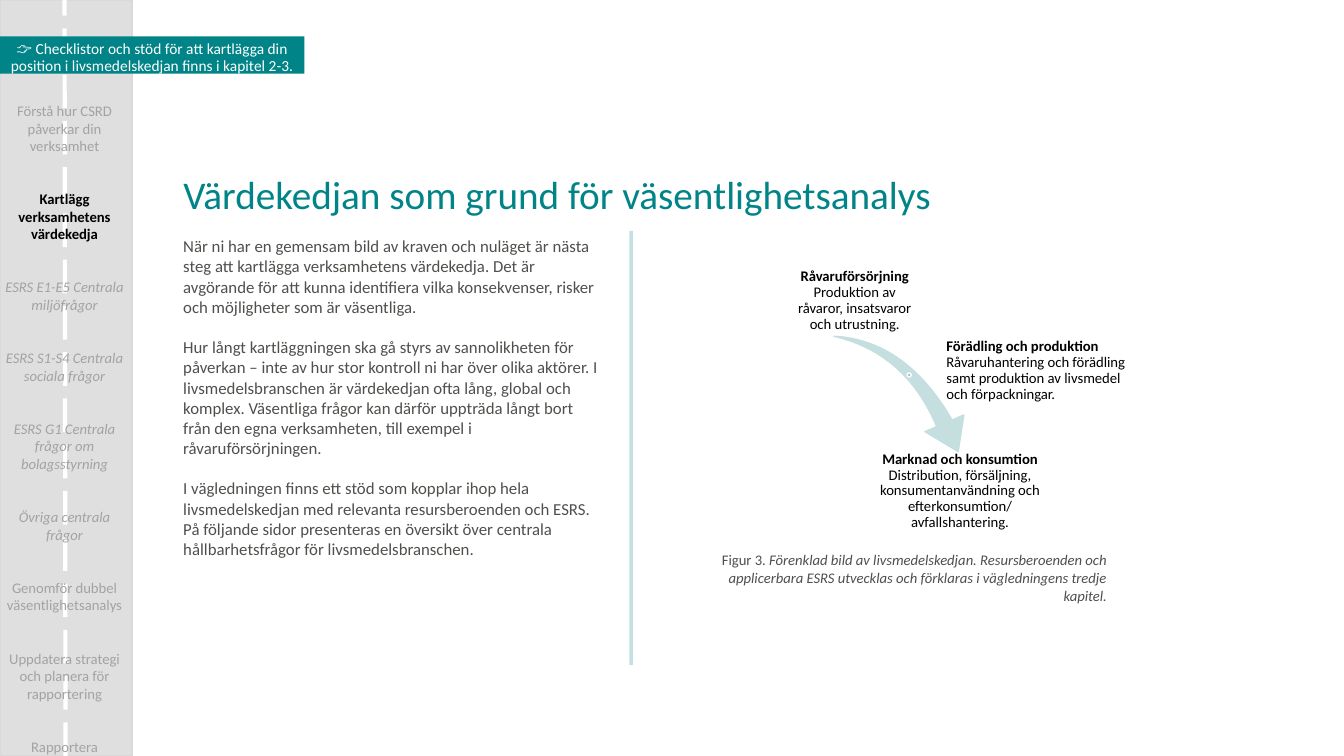
"""Build the slide on the value chain as a basis for materiality analysis."""
from dataclasses import dataclass

from lxml.etree import SubElement
from pptx import Presentation
from pptx.dml.color import RGBColor
from pptx.enum.dml import MSO_LINE
from pptx.enum.shapes import MSO_CONNECTOR, MSO_SHAPE
from pptx.enum.text import MSO_ANCHOR as ANCHOR, MSO_AUTO_SIZE, PP_ALIGN as ALIGN
from pptx.oxml.ns import qn
from pptx.util import Pt


@dataclass(frozen=True)
class Theme:
    font: str = "Calibri"
    teal: str = "008487"
    pale_teal: str = "C5DEE0"
    dot: str = "ABC2C3"
    sidebar: str = "DFDFDF"
    sidebar_edge: str = "D9D9D9"
    white: str = "FFFFFF"
    black: str = "000000"
    body: str = "4F4F4C"
    muted: str = "A3A3A3"
    title_size: float = 28
    body_size: float = 12
    banner_size: float = 11
    label_size: float = 10.5


THEME = Theme()


def write(shape, paragraphs, size, color, anchor=ANCHOR.TOP, insets=(7.2, 3.6), **formats):
    """Fill a shape with paragraphs, each a list of (text, run font formats)."""
    frame = shape.text_frame
    frame.word_wrap = True
    frame.auto_size = MSO_AUTO_SIZE.NONE
    frame.vertical_anchor = anchor
    frame.margin_left = frame.margin_right = Pt(insets[0])
    frame.margin_top = frame.margin_bottom = Pt(insets[1])
    gap = formats.pop("gap", 0)
    for index, runs in enumerate(paragraphs):
        paragraph = frame.add_paragraph() if index else frame.paragraphs[0]
        paragraph.space_before = Pt(gap if index else 0)
        for name, value in formats.items():
            setattr(paragraph, name, value)
        for position, (text, run_formats) in enumerate(runs):
            if position and formats.get("line_spacing"):
                paragraph.add_line_break()
            run = paragraph.add_run()
            run.text = text
            values = {"name": THEME.font, "size": Pt(size), "bold": False, "italic": False}
            for name, value in (values | run_formats).items():
                if name != "color":
                    setattr(run.font, name, value)
            run.font.color.rgb = RGBColor.from_string(run_formats.get("color", color))


def add_figure(kind, box, fill, line):
    """Add a filled preset shape without shadow."""
    shape = slide.shapes.add_shape(kind, *map(Pt, box))
    shape.shadow.inherit = False
    shape.fill.solid()
    shape.fill.fore_color.rgb = RGBColor.from_string(fill)
    shape.line.color.rgb = RGBColor.from_string(line)
    shape.line.width = Pt(1)
    return shape


presentation = Presentation()
presentation.slide_width, presentation.slide_height = Pt(960), Pt(540)
slide = presentation.slides.add_slide(presentation.slide_layouts[5])

add_figure(MSO_SHAPE.RECTANGLE, (0, 0, 94.3, 540), THEME.sidebar, THEME.sidebar_edge)

lines = {}
for name, ends, color, width in (
    ("road", (46.8, 540, 46.1, 0), THEME.white, 3),
    ("divider", (450.9, 165, 450.9, 475), THEME.teal, 2.5),
):
    connector = slide.shapes.add_connector(MSO_CONNECTOR.STRAIGHT, *map(Pt, ends))
    connector.line.color.rgb = RGBColor.from_string(color)
    connector.line.width = Pt(width)
    SubElement(connector._element.spPr, qn("a:effectLst"))
    lines[name] = connector
lines["road"].line.dash_style = MSO_LINE.LONG_DASH
divider_color = lines["divider"]._element.spPr.find(".//" + qn("a:srgbClr"))
SubElement(divider_color, qn("a:alpha")).set("val", "23000")

title = slide.shapes.title
title.left, title.top, title.width, title.height = map(Pt, (123.8, 112.3, 570, 57))
write(title, [[("Värdekedjan som grund för väsentlighetsanalys", {})]], THEME.title_size,
      THEME.teal, ANCHOR.MIDDLE, (7.2, 0), alignment=ALIGN.LEFT, line_spacing=0.9)

body_texts = (
    "När ni har en gemensam bild av kraven och nuläget är nästa steg att kartlägga "
    "verksamhetens värdekedja. Det är avgörande för att kunna identifiera vilka "
    "konsekvenser, risker och möjligheter som är väsentliga.",
    "Hur långt kartläggningen ska gå styrs av sannolikheten för påverkan – inte av hur "
    "stor kontroll ni har över olika aktörer. I livsmedelsbranschen är värdekedjan ofta "
    "lång, global och komplex. Väsentliga frågor kan därför uppträda långt bort från den "
    "egna verksamheten, till exempel i råvaruförsörjningen.",
    "I vägledningen finns ett stöd som kopplar ihop hela livsmedelskedjan med relevanta "
    "resursberoenden och ESRS. På följande sidor presenteras en översikt över centrala "
    "hållbarhetsfrågor för livsmedelsbranschen.",
)
body = slide.shapes.add_textbox(*map(Pt, (123.8, 165, 313.2, 240)))
write(body, [[(text, {})] for text in body_texts], THEME.body_size, THEME.body, gap=14.5)

arrow = add_figure(MSO_SHAPE.SWOOSH_ARROW, (593.3, 243.4, 104.4, 72.7),
                   THEME.pale_teal, THEME.pale_teal)
arrow.rotation = 73.3
arrow.adjustments[0], arrow.adjustments[1] = 0.163, 0.314
add_figure(MSO_SHAPE.OVAL, (648, 266.4, 2.9, 2.9), THEME.dot, THEME.white)

stages = (
    ("Råvaruförsörjning", "Produktion av råvaror, insatsvaror och utrustning.",
     (565.9, 219.6, 89.3, 19.4), ANCHOR.BOTTOM, ALIGN.CENTER),
    ("Förädling och produktion",
     "Råvaruhantering och förädling samt produktion av livsmedel och förpackningar.",
     (674.6, 249.8, 136.1, 30.2), ANCHOR.MIDDLE, ALIGN.LEFT),
    ("Marknad och konsumtion",
     "Distribution, försäljning, konsumentanvändning och efterkonsumtion/ avfallshantering.",
     (611.3, 321.1, 149, 19.4), ANCHOR.TOP, ALIGN.CENTER),
)
for heading, text, box, anchor, alignment in stages:
    label = slide.shapes.add_textbox(*map(Pt, box))
    write(label, [[(heading, {"bold": True}), (text, {})]], THEME.label_size, THEME.black,
          anchor, (1.4, 1.4), alignment=alignment, line_spacing=0.9)

banner = add_figure(MSO_SHAPE.RECTANGLE, (0, 26, 217.4, 26.6), THEME.teal, THEME.teal)
banner.line.fill.background()
banner_text = ("👉 Checklistor och stöd för att kartlägga din position i livsmedelskedjan "
               "finns i kapitel 2-3.")
write(banner, [[(banner_text, {})]], THEME.banner_size, THEME.white,
      alignment=ALIGN.CENTER, line_spacing=0.9)

caption = slide.shapes.add_textbox(*map(Pt, (484.6, 390.2, 313.2, 45.4)))
caption_text = ("Förenklad bild av livsmedelskedjan. Resursberoenden och applicerbara ESRS "
                "utvecklas och förklaras i vägledningens tredje kapitel.")
write(caption, [[("Figur 3. ", {}), (caption_text, {"italic": True})]],
      THEME.label_size, THEME.body, alignment=ALIGN.RIGHT)

current, topic = {"bold": True, "color": THEME.black}, {"italic": True}
steps = (
    ("Förstå hur CSRD påverkar din verksamhet", {}),
    ("Kartlägg verksamhetens värdekedja", current),
    ("ESRS E1-E5 Centrala miljöfrågor", topic),
    ("ESRS S1-S4 Centrala sociala frågor", topic),
    ("ESRS G1 Centrala frågor om bolagsstyrning", topic),
    ("Övriga centrala frågor", topic),
    ("Genomför dubbel väsentlighetsanalys", {}),
    ("Uppdatera strategi och planera för rapportering", {}),
    ("Rapportera", {}),
)
sidebar = slide.shapes.add_textbox(*map(Pt, (-5, 69.1, 102.2, 470)))
write(sidebar, [[step] for step in steps], THEME.label_size, THEME.muted,
      gap=25.3, alignment=ALIGN.CENTER)

presentation.save("out.pptx")
